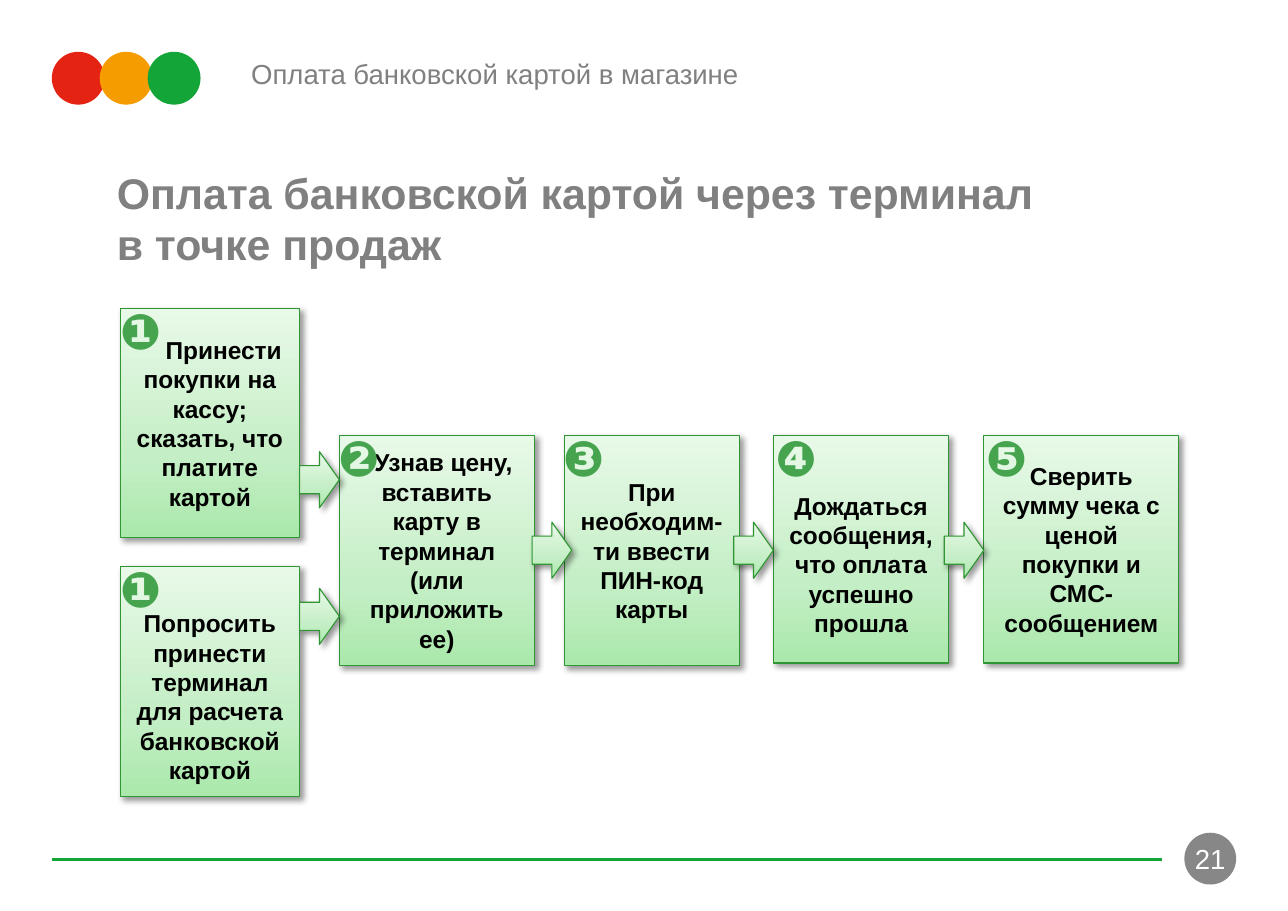
from pptx import Presentation, util as u, oxml
from pptx.dml.color import RGBColor
from pptx.enum import shapes as s, text as t
from pptx.oxml.ns import nsdecls, qn

# Content
TOPIC = "Оплата банковской картой в магазине"
HEAD = "Оплата банковской картой через терминал\vв точке продаж"
PAGE = "21"
# Mark, mark left, box (left, top, width, height), first indent, drop, text
STEPS = [
    ("❶", 0.99, (1.09, 2.8, 1.63, 2.08), 0.25, 0,
     "Принести покупки на кассу; сказать, что платите картой"),
    ("❶", 0.99, (1.09, 5.14, 1.63, 2.09), 0, 0.27,
     "Попросить принести терминал для расчета банковской картой"),
    ("❷", 2.97, (3.08, 3.95, 1.77, 2.09), 0.12, 0,
     "Узнав цену, вставить карту в терминал (или приложить ее)"),
    ("❸", 5.01, (5.12, 3.95, 1.59, 2.09), 0, 0,
     "При необходим-ти ввести ПИН-код карты"),
    ("❹", 6.94, (7.02, 3.95, 1.59, 2.07), 0, 0.27,
     "Дождаться сообщения, что оплата успешно прошла"),
    ("❺", 8.85, (8.93, 3.95, 1.77, 2.07), 0, 0,
     "Сверить сумму чека с ценой покупки и СМС-сообщением"),
]
ARROWS = [(2.72, 4.1), (2.72, 5.34), (4.83, 4.74), (6.66, 4.74), (8.57, 4.74)]
THEME = {
    "font": "Arial", "grey": "808080", "white": "FFFFFF", "ink": "000000",
    "mark": "46A44F", "edge": "309634", "rule": "13A538", "page": "878787",
    "dots": ["E42313", "F59C00", "13A538"],
    "fade": [(0, "AAE8AB"), (35, "C4EEC5"), (100, "E8F9E8")],
    "head": 28, "topic": 18, "step": 16, "badge": 32,
}

deck = Presentation()
deck.slide_width, deck.slide_height = u.Inches(11.69), u.Inches(8.27)
slide = deck.slides.add_slide(deck.slide_layouts[1])


def rgb(key):
    return RGBColor.from_string(THEME.get(key, key))


def place(item, *box):
    item.left, item.top, item.width, item.height = map(u.Inches, box)


def write(item, words, size, color, bold=False, align=t.PP_ALIGN.LEFT):
    par = item.text_frame.paragraphs[0]
    par.text = words
    par.alignment = align
    for run in par.runs:
        font = run.font
        font.name, font.size, font.bold = THEME["font"], u.Pt(THEME[size]), bold
        font.color.rgb = rgb(color)
    return par


def draw(kind, *box):
    item = slide.shapes.add_shape(kind, *map(u.Inches, box))
    item.shadow.inherit = False
    return item


def disc(left, top, size, color):
    item = draw(s.MSO_SHAPE.OVAL, left, top, size, size)
    item.fill.solid()
    item.fill.fore_color.rgb = rgb(color)
    item.line.fill.background()
    return item


def panel(kind, *box):
    """Shape with the green fade, thin edge and soft shadow."""
    item = draw(kind, *box)
    item.line.color.rgb = rgb("edge")
    item.line.width = u.Pt(0.75)
    stops = "".join(f'<a:gs pos="{pos * 1000}"><a:srgbClr val="{tone}"/></a:gs>'
                    for pos, tone in THEME["fade"])
    props = item.element.spPr
    props.find(qn("a:prstGeom")).addnext(oxml.parse_xml(
        f'<a:gradFill {nsdecls("a")} rotWithShape="1"><a:gsLst>{stops}</a:gsLst>'
        '<a:lin ang="16200000" scaled="0"/></a:gradFill>'))
    props.find(qn("a:effectLst")).append(oxml.parse_xml(
        f'<a:outerShdw {nsdecls("a")} blurRad="{u.Pt(4)}" dist="{u.Pt(3)}" '
        'dir="2700000" algn="tl" rotWithShape="0"><a:srgbClr val="000000">'
        '<a:alpha val="40000"/></a:srgbClr></a:outerShdw>'))
    return item


# Traffic-light dots, rule and page number
for i, tone in enumerate(THEME["dots"]):
    disc(0.47 + i * 0.435, 0.47, 0.48, tone)
rule = slide.shapes.add_connector(
    s.MSO_CONNECTOR.STRAIGHT, *map(u.Inches, (0.47, 7.8, 10.55, 7.8)))
rule.line.color.rgb = rgb("rule")
rule.line.width = u.Pt(2)
rule.element.spPr.append(oxml.parse_xml(f'<a:effectLst {nsdecls("a")}/>'))
page = disc(10.75, 7.56, 0.47, "page")
page.text_frame.word_wrap = False
page.text_frame.vertical_anchor = t.MSO_ANCHOR.MIDDLE
write(page, PAGE, "topic", "white", align=t.PP_ALIGN.CENTER)

# Topic and heading
title, body = slide.shapes.title, slide.placeholders[1]
place(title, 0.96, 1.46, 10, 0.87)
place(body, 2.18, 0.47, 7.5, 0.58)
for item in (title, body):
    item.text_frame.vertical_anchor = t.MSO_ANCHOR.TOP
    item.text_frame.auto_size = t.MSO_AUTO_SIZE.NONE
    props = item.text_frame.paragraphs[0]._p.get_or_add_pPr()
    props.set("marL", "0")
    props.set("indent", "0")
    props.append(oxml.parse_xml(f'<a:buNone {nsdecls("a")}/>'))
    item.text_frame.paragraphs[0].space_before = u.Pt(0)
write(title, HEAD, "head", "grey", True)
write(body, TOPIC, "topic", "grey")

# Step boxes
for _, _, box, indent, drop, words in STEPS:
    item = panel(s.MSO_SHAPE.RECTANGLE, *box)
    frame = item.text_frame
    frame.word_wrap = True
    frame.vertical_anchor = t.MSO_ANCHOR.MIDDLE
    frame.margin_top = u.Inches(0.05 + drop)
    par = write(item, words, "step", "ink", True, t.PP_ALIGN.CENTER)
    props = par._p.get_or_add_pPr()
    props.set("marL", "0")
    props.set("indent", str(u.Inches(indent)))

# Arrows between steps
for left, top in ARROWS:
    panel(s.MSO_SHAPE.RIGHT_ARROW, left, top, 0.36, 0.51)

# Number marks on the box corners
for mark, left, box, *_ in STEPS:
    item = slide.shapes.add_textbox(
        *map(u.Inches, (left, box[1] - 0.12, 0.6, 0.64)))
    item.text_frame.word_wrap = False
    item.text_frame.auto_size = t.MSO_AUTO_SIZE.SHAPE_TO_FIT_TEXT
    write(item, mark, "badge", "mark", True)

deck.save("out.pptx")
